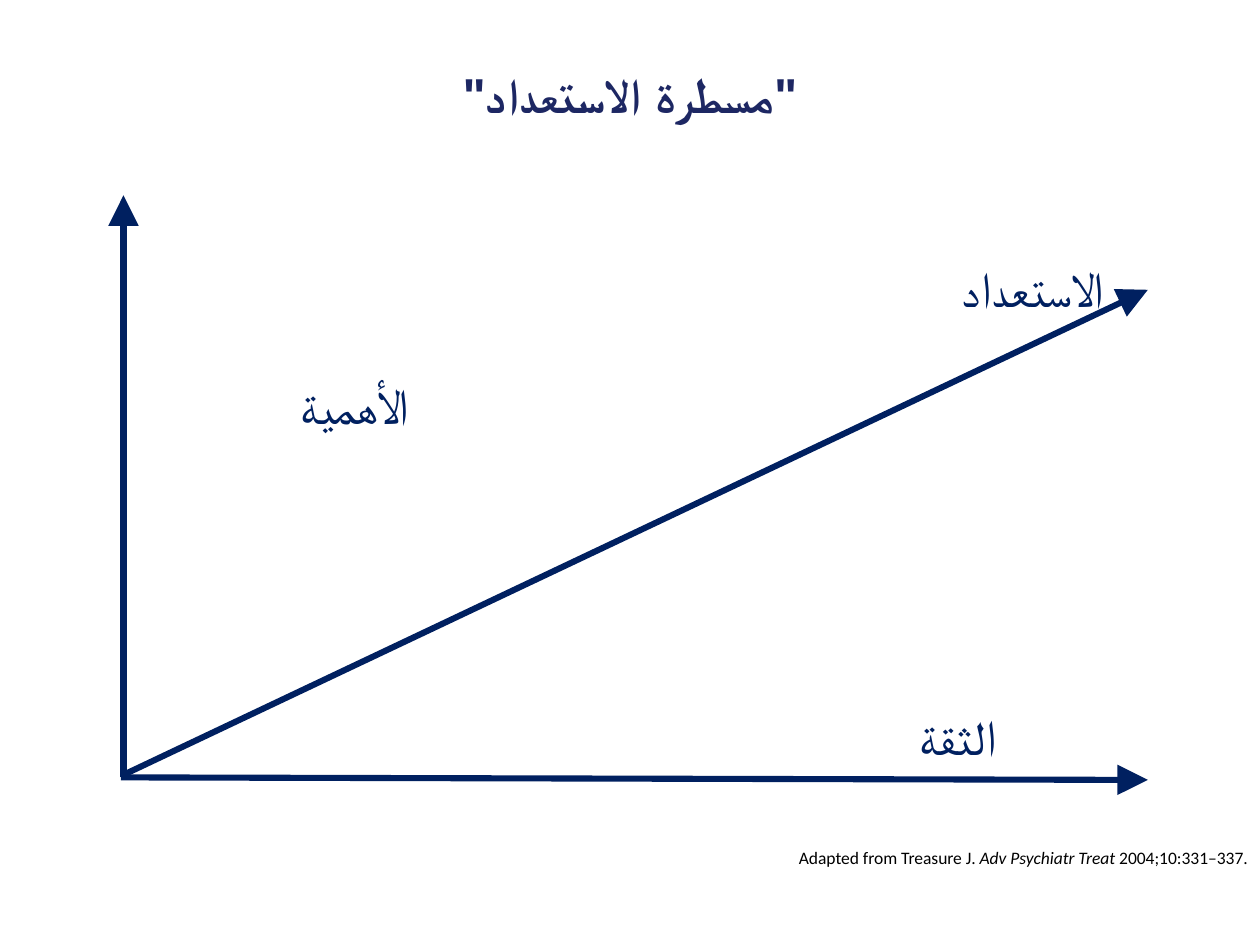
import pptx
import pptx.dml.color
import pptx.enum.text
import pptx.oxml.ns
import pptx.util
from lxml import etree

NAVY = pptx.dml.color.RGBColor(0x00, 0x20, 0x60)
TITLE_BLUE = pptx.dml.color.RGBColor(0x1D, 0x27, 0x63)
BLACK = pptx.dml.color.RGBColor(0x00, 0x00, 0x00)
COLUMNS, ROWS = 100, 75
ALIGN = pptx.enum.text.PP_ALIGN
ANCHOR = pptx.enum.text.MSO_ANCHOR


class RulerSlide:
    """Holds the style and the current slide, placing elements on a 100 by 75 grid."""

    arabic_font = "Arial"
    source_font = "Calibri"
    arabic_size = 28
    source_size = 10
    line_width = 3.5

    def __init__(self, presentation):
        self.column = presentation.slide_width / COLUMNS
        self.row = presentation.slide_height / ROWS
        self.slide = presentation.slides.add_slide(presentation.slide_layouts[5])

    def point(self, column, row):
        return round(column * self.column), round(row * self.row)

    def add_run(self, paragraph, text, font, size, color, bold=False, italic=False):
        run = paragraph.add_run()
        run.text = text
        run.font.name = font
        run.font.size = pptx.util.Pt(size)
        run.font.bold = bold
        run.font.italic = italic
        run.font.color.rgb = color
        return run

    def add_arabic(self, paragraph, text, color, alignment, bold=False):
        paragraph.alignment = alignment
        paragraph._p.get_or_add_pPr().set("rtl", "1")
        run = self.add_run(paragraph, text, self.arabic_font, self.arabic_size, color, bold)
        complex_font = etree.SubElement(run.font._element, pptx.oxml.ns.qn("a:cs"))
        complex_font.set("typeface", self.arabic_font)

    def title(self, text, left, top, width, height):
        shape = self.slide.shapes.title
        shape.left, shape.top = self.point(left, top)
        shape.width, shape.height = self.point(width, height)
        shape.text_frame.vertical_anchor = ANCHOR.MIDDLE
        self.add_arabic(shape.text_frame.paragraphs[0], text, TITLE_BLUE, ALIGN.CENTER, True)

    def text_box(self, left, top, width, height):
        shape = self.slide.shapes.add_textbox(*self.point(left, top), *self.point(width, height))
        shape.text_frame.word_wrap = True
        shape.text_frame.auto_size = pptx.enum.text.MSO_AUTO_SIZE.SHAPE_TO_FIT_TEXT
        return shape.text_frame.paragraphs[0]

    def label(self, text, left, top, width):
        self.add_arabic(self.text_box(left, top, width, 5.7), text, NAVY, ALIGN.RIGHT)

    def source(self, parts, left, top, width, height):
        paragraph = self.text_box(left, top, width, height)
        paragraph.alignment = ALIGN.RIGHT
        for text, italic in parts:
            self.add_run(paragraph, text, self.source_font, self.source_size, BLACK, italic=italic)

    def arrow(self, start, tip):
        connector = self.slide.shapes.add_connector(
            pptx.enum.shapes.MSO_CONNECTOR.STRAIGHT, *self.point(*start), *self.point(*tip))
        connector.line.color.rgb = NAVY
        connector.line.width = pptx.util.Pt(self.line_width)
        tail = etree.SubElement(connector.line._get_or_add_ln(), pptx.oxml.ns.qn("a:tailEnd"))
        for name, value in (("type", "triangle"), ("w", "lg"), ("len", "lg")):
            tail.set(name, value)
        etree.SubElement(connector._element.spPr, pptx.oxml.ns.qn("a:effectLst"))


def main():
    presentation = pptx.Presentation()
    presentation.slide_width = pptx.util.Inches(10)
    presentation.slide_height = pptx.util.Inches(7.5)
    ruler = RulerSlide(presentation)
    ruler.title('"مسطرة الاستعداد"', 5, 3.2, 90, 8.5)
    ruler.arrow((10, 61.4), (91.1, 23))
    ruler.arrow((9.6, 61.7), (91.1, 61.9))
    ruler.arrow((9.8, 61.7), (9.8, 15.5))
    ruler.label("الأهمية", 8.9, 29.3, 24.5)
    ruler.label("الثقة", 53.3, 55.6, 26.8)
    ruler.label("الاستعداد", 64.1, 20, 24.5)
    ruler.source((("Adapted from Treasure J. ", False), ("Adv Psychiatr Treat", True),
                  (" 2004;10:331–337.", False)), 60.9, 66.7, 39.1, 2.7)
    presentation.save("out.pptx")


if __name__ == "__main__":
    import pptx.enum.shapes
    main()
